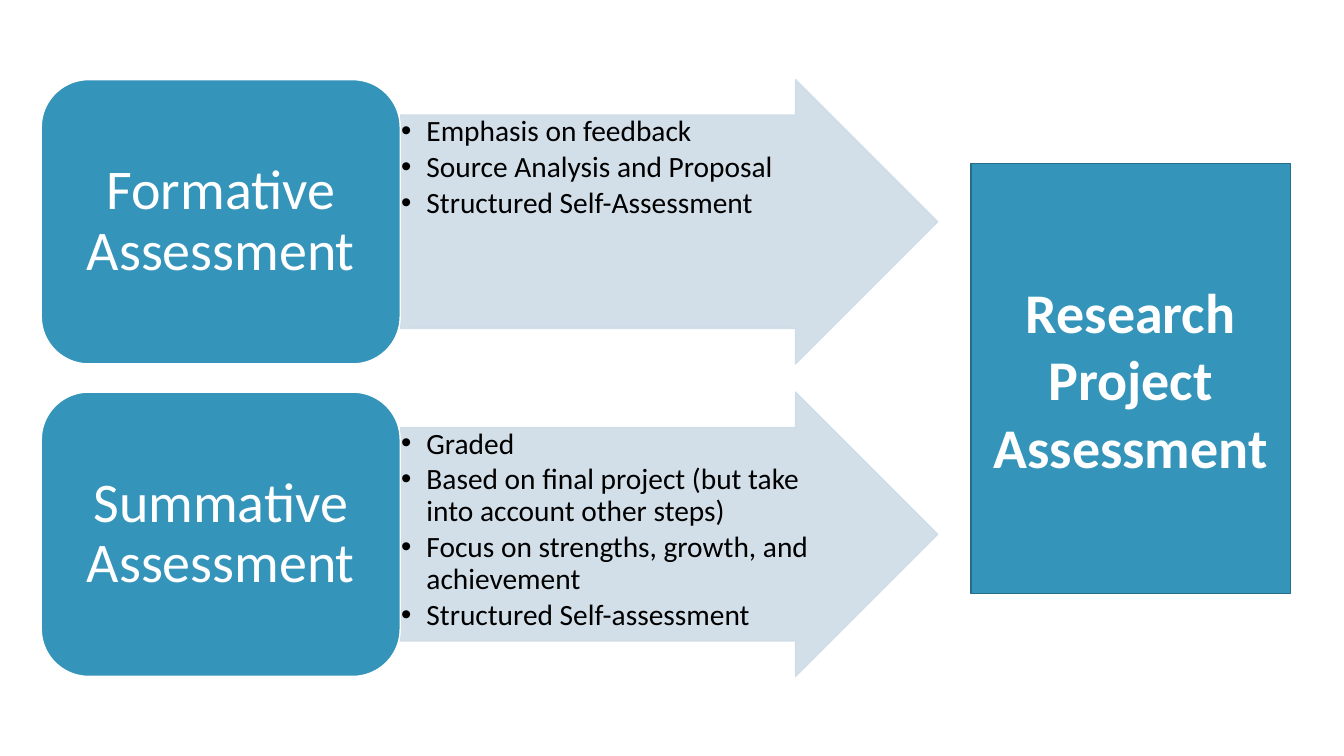
from lxml import etree
from pptx import Presentation
from pptx.dml.color import RGBColor
from pptx.enum.shapes import MSO_SHAPE as SHAPE
from pptx.enum.text import MSO_ANCHOR as ANCHOR, PP_ALIGN as ALIGN
from pptx.oxml.ns import qn
from pptx.util import Inches, Pt

STAGES = [
    ("Formative Assessment", [
        "Emphasis on feedback",
        "Source Analysis and Proposal",
        "Structured Self-Assessment",
    ]),
    ("Summative Assessment", [
        "Graded",
        "Based on final project (but take into account other steps)",
        "Focus on strengths, growth, and achievement",
        "Structured Self-assessment",
    ]),
]
RESULT = "Research Project Assessment"

FONT = "Calibri"
TEAL, DARK_TEAL, PALE = "3494BA", "266D8A", "CEDCE7"
WHITE, BLACK = "FFFFFF", "000000"
LEFT, TOP, PITCH = 0.41, 0.79, 3.1
BOX_W, ARROW_W, ROW_H = 3.56, 5.33, 2.82


def rgb(color):
    return RGBColor.from_string(color)


def add_block(s, kind, box, fill, line, insets, anchor=ANCHOR.MIDDLE):
    sp = s.shapes.add_shape(kind, *map(Inches, box))
    sp.shadow.inherit = False
    sp.fill.solid()
    sp.fill.fore_color.rgb = rgb(fill)
    sp.line.color.rgb = rgb(line)
    sp.line.width = Pt(1)
    tf = sp.text_frame
    tf.word_wrap = True
    tf.vertical_anchor = anchor
    tf.margin_left = tf.margin_right = Inches(insets[0])
    tf.margin_top = tf.margin_bottom = Inches(insets[1])
    return sp


def add_text(p, text, size, color, align, bold=False):
    p.alignment = align
    r = p.add_run()
    r.text = text
    r.font.name = FONT
    r.font.size = Pt(size)
    r.font.bold = bold
    r.font.color.rgb = rgb(color)


def add_bullet(p):
    pPr = p._p.get_or_add_pPr()
    pPr.set("marL", str(Inches(0.25)))
    pPr.set("indent", str(-Inches(0.25)))
    etree.SubElement(pPr, qn("a:buFont")).set("typeface", "Arial")
    etree.SubElement(pPr, qn("a:buChar")).set("char", "•")


def set_opacity(sp, percent):
    for clr in sp._element.spPr.iter(qn("a:srgbClr")):
        etree.SubElement(clr, qn("a:alpha")).set("val", str(percent * 1000))


def add_arrow(s, top, points):
    sp = add_block(s, SHAPE.RIGHT_ARROW, (LEFT + BOX_W, top, ARROW_W, ROW_H),
                   PALE, PALE, (0.01, 0.01), ANCHOR.TOP)
    sp.adjustments[0] = 0.75
    sp.adjustments[1] = 0.5
    set_opacity(sp, 90)
    tf = sp.text_frame
    for i, point in enumerate(points):
        p = tf.add_paragraph() if i else tf.paragraphs[0]
        add_bullet(p)
        p.line_spacing = 0.9
        p.space_after = Pt(3)
        add_text(p, point, 21, BLACK, ALIGN.LEFT)


def add_stage(s, top, name):
    sp = add_block(s, SHAPE.ROUNDED_RECTANGLE, (LEFT, top, BOX_W, ROW_H),
                   TEAL, WHITE, (0.17, 0.08))
    p = sp.text_frame.paragraphs[0]
    p.line_spacing = 0.9
    add_text(p, name, 40, WHITE, ALIGN.CENTER)


def main():
    prs = Presentation()
    prs.slide_width, prs.slide_height = Inches(13.33), Inches(7.5)
    s = prs.slides.add_slide(prs.slide_layouts[6])
    for i, (name, points) in enumerate(STAGES):
        top = TOP + i * PITCH
        add_arrow(s, top, points)
        add_stage(s, top, name)
    result = add_block(s, SHAPE.RECTANGLE, (9.63, 1.62, 3.17, 4.27),
                       TEAL, DARK_TEAL, (0.1, 0.05))
    add_text(result.text_frame.paragraphs[0], RESULT, 40, WHITE, ALIGN.CENTER, True)
    prs.save("out.pptx")


if __name__ == "__main__":
    main()
